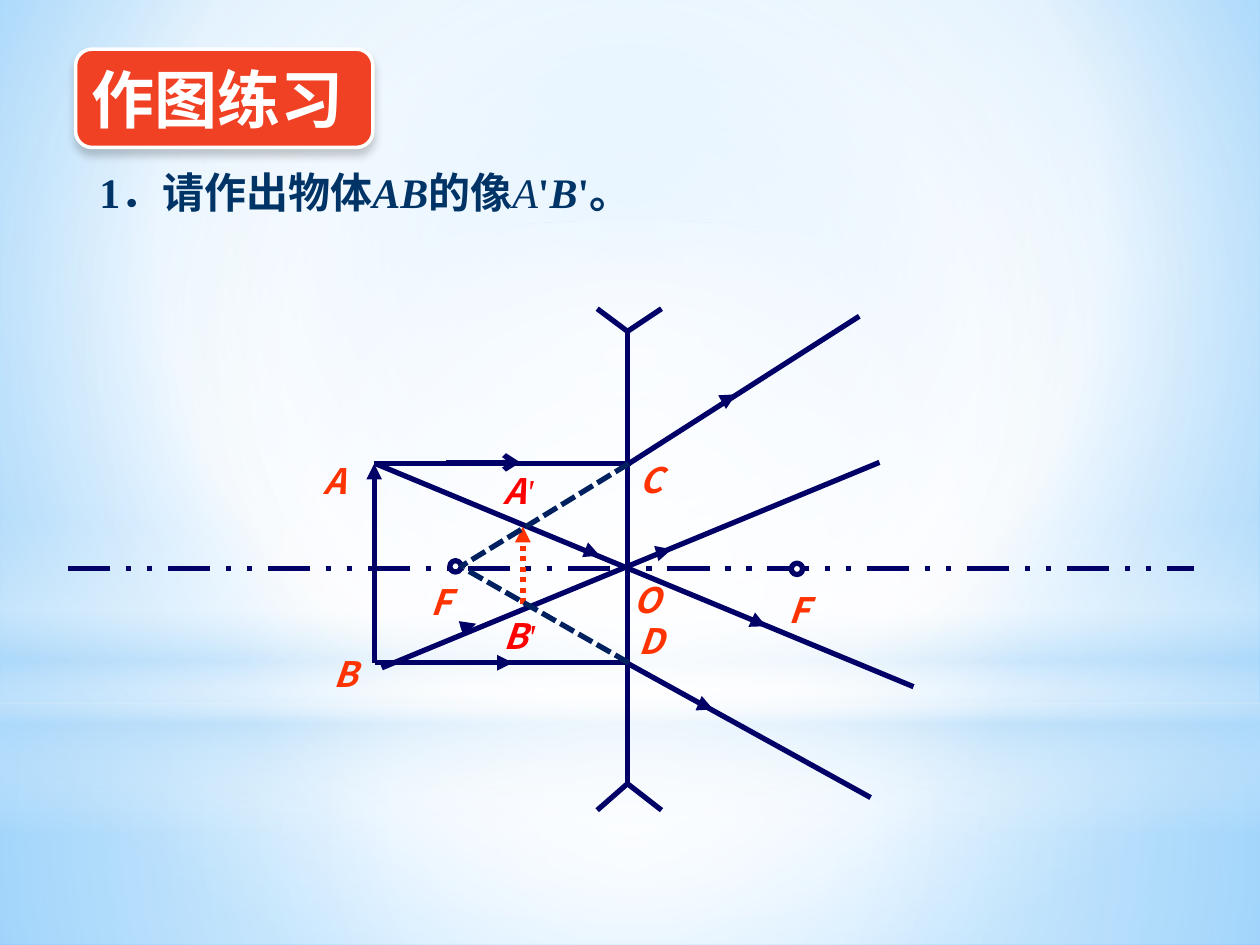
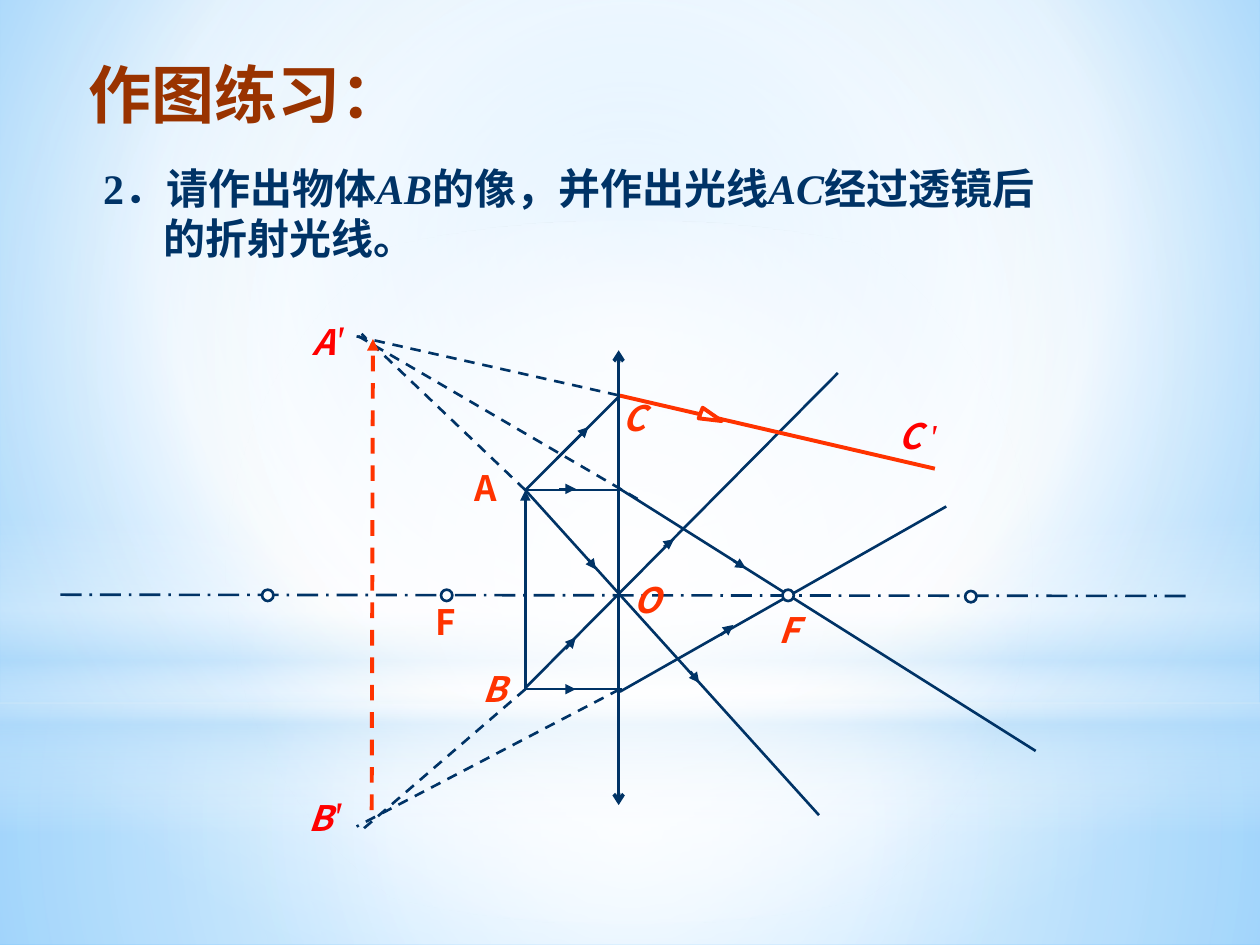
import pptx
import pptx.util
import pptx.dml.color
import pptx.enum.dml
import pptx.enum.shapes
import pptx.enum.text
import pptx.oxml
import pptx.oxml.ns
from lxml import etree

Inches, Pt = pptx.util.Inches, pptx.util.Pt
qn = pptx.oxml.ns.qn
SHAPE = pptx.enum.shapes.MSO_SHAPE
DASH = pptx.enum.dml.MSO_LINE
ANCHOR = pptx.enum.text.MSO_ANCHOR
AUTO_SIZE = pptx.enum.text.MSO_AUTO_SIZE

COLORS = {
    "white": "FFFFFF", "sky": "B4DCFA", "sky_core": "9ED5FF", "sky_edge": "5BB9FF",
    "badge": "F14124", "title": "993300", "question": "003366", "focus": "FCFDFE",
    "navy": "000066", "ink": "003366", "extension": "002060",
    "label": "FF3300", "image_label": "FF0000", "shadow": "000000",
}
SERIF, SANS = "Times New Roman", "Noto Sans CJK SC"
CENTRE = (50, 50, 50, 50)


def rgb(name):
    return pptx.dml.color.RGBColor.from_string(COLORS[name])


def set_gradient(fill, element, stops, focus=None):
    """Gradient of (position, colour, opacity) stops: circular around focus, or downwards."""
    fill.solid()
    solid = element.xpath(".//a:solidFill")[0]
    gradient = etree.Element(qn("a:gradFill"), rotWithShape="1")
    stop_list = etree.SubElement(gradient, qn("a:gsLst"))
    for position, color, opacity in stops:
        stop = etree.SubElement(stop_list, qn("a:gs"), pos=str(position * 1000))
        value = etree.SubElement(stop, qn("a:srgbClr"), val=COLORS[color])
        if opacity < 100:
            etree.SubElement(value, qn("a:alpha"), val=str(opacity * 1000))
    if focus:
        circle = etree.SubElement(gradient, qn("a:path"), path="circle")
        sides = {side: str(share * 1000) for side, share in zip("ltrb", focus)}
        etree.SubElement(circle, qn("a:fillToRect"), **sides)
    else:
        etree.SubElement(gradient, qn("a:lin"), ang="5400000", scaled="0")
    solid.getparent().replace(solid, gradient)


class LensDeck:
    """Holds the shared style and the current slide."""

    def __init__(self):
        self.prs = pptx.Presentation()
        self.prs.slide_width, self.prs.slide_height = Inches(10), Inches(7.5)
        self.slide = None
        self.ink, self.weight = "navy", 3

    def new_slide(self, ink, weight):
        self.slide = self.prs.slides.add_slide(self.prs.slide_layouts[5])
        self.ink, self.weight = ink, weight

    def sky(self):
        """Put the sky backdrop on the master."""
        master = self.prs.slide_master
        set_gradient(master.background.fill, master.element,
                     [(0, "sky_core", 100), (60, "white", 100), (100, "sky_edge", 100)],
                     (20, 10, 20, 60))
        layers = [
            (SHAPE.RECTANGLE, 5.58, 1.92, CENTRE,
             [(0, "white", 91), (37, "white", 76), (100, "sky", 79)]),
            (SHAPE.RECTANGLE, 0, 5.58, CENTRE,
             [(0, "white", 89), (48, "white", 62), (100, "sky", 79)]),
            (SHAPE.RECTANGLE, 4.12, 2.5, None,
             [(0, "white", 0), (29, "white", 30), (45, "sky", 40),
              (55, "white", 26), (65, "sky", 60), (100, "white", 0)]),
            (SHAPE.OVAL, 1.75, 5.58, CENTRE, [(0, "white", 100), (56, "white", 0)]),
        ]
        for order, (kind, top, height, focus, stops) in enumerate(layers):
            layer = self.shape(kind, 0, top, 10, height)
            layer.line.fill.background()
            set_gradient(layer.fill, layer.element, stops, focus)
            layer.element.xpath(".//p:cNvPr")[0].set("id", str(100 + order))
            master.shapes.element.insert(2 + order, layer.element)

    def shape(self, kind, left, top, width, height, fill=None, line=None, weight=None):
        shape = self.slide.shapes.add_shape(
            kind, Inches(left), Inches(top), Inches(width), Inches(height))
        shape.shadow.inherit = False
        if fill:
            shape.fill.solid()
            shape.fill.fore_color.rgb = rgb(fill)
        if line:
            shape.line.color.rgb = rgb(line)
            shape.line.width = Pt(weight or self.weight)
        return shape

    def badge(self, left, top, width, height):
        badge = self.shape(SHAPE.ROUNDED_RECTANGLE, left, top, width, height,
                           "badge", "white", 2)
        effects = badge.element.spPr.find(qn("a:effectLst"))
        shadow = etree.SubElement(effects, qn("a:outerShdw"), blurRad=str(Pt(5)),
                                  dist=str(Pt(4)), dir="5400000", rotWithShape="0")
        value = etree.SubElement(shadow, qn("a:srgbClr"), val=COLORS["shadow"])
        etree.SubElement(value, qn("a:alpha"), val="20000")
        # The title is written on top of its badge
        title = self.slide.shapes.title.element
        badge.element.addnext(title)

    def style(self, paragraph, size, color, latin):
        paragraph.alignment = pptx.enum.text.PP_ALIGN.LEFT
        font = paragraph.font
        font.size, font.bold, font.name = Pt(size), True, latin
        font.color.rgb = rgb(color)
        defaults = paragraph._p.pPr.find(qn("a:defRPr"))
        etree.SubElement(defaults, qn("a:ea"), typeface=SANS)

    def title(self, text, left, top, width, height, color):
        title = self.slide.shapes.title
        title.left, title.top = Inches(left), Inches(top)
        title.width, title.height = Inches(width), Inches(height)
        frame = title.text_frame
        frame.text = text
        frame.word_wrap, frame.auto_size = True, AUTO_SIZE.NONE
        frame.vertical_anchor = ANCHOR.MIDDLE
        self.style(frame.paragraphs[0], 36, color, SERIF)

    def text_box(self, left, top, width, height, wrap=True):
        box = self.slide.shapes.add_textbox(
            Inches(left), Inches(top), Inches(width), Inches(height))
        box.text_frame.word_wrap = wrap
        box.text_frame.auto_size = AUTO_SIZE.SHAPE_TO_FIT_TEXT
        return box.text_frame.paragraphs[0]

    def question(self, left, top, width, height, parts):
        """Parts are (text, italic, bold)."""
        paragraph = self.text_box(left, top, width, height)
        self.style(paragraph, 24, "question", SERIF)
        paragraph._p.pPr.set("marL", str(Inches(0.48)))
        paragraph._p.pPr.set("indent", str(-Inches(0.48)))
        for text, italic, bold in parts:
            run = paragraph.add_run()
            run.text = text
            run.font.italic, run.font.bold = italic, bold

    def label(self, text, left, top, width=0.39, italic=True, color="label", prime_size=None):
        paragraph = self.text_box(left, top, width, 0.44, wrap=width >= 0.5)
        self.style(paragraph, 20, color, SANS)
        paragraph.font.italic = italic
        paragraph.add_run().text = text
        if prime_size:
            prime = paragraph.add_run()
            prime.text = "'"
            prime.font.name, prime.font.size, prime.font.bold = SERIF, Pt(prime_size), False

    def line(self, start, end, color=None, weight=None, dash=None, head=None, tail=None):
        line = self.slide.shapes.add_connector(
            pptx.enum.shapes.MSO_CONNECTOR.STRAIGHT,
            *(Inches(value) for value in (*start, *end)))
        line.line.color.rgb = rgb(color or self.ink)
        line.line.width = Pt(weight or self.weight)
        if dash:
            line.line.dash_style = dash
        properties = line.element.spPr
        for tag, kind in (("a:headEnd", head), ("a:tailEnd", tail)):
            if kind:
                etree.SubElement(properties.find(qn("a:ln")), qn(tag), type=kind)
        etree.SubElement(properties, qn("a:effectLst"))

    def ray(self, start, end, *marks, tail="triangle"):
        """A light ray with direction marks (from, to) along it."""
        self.line(start, end)
        for mark_start, mark_end in marks:
            self.line(mark_start, mark_end, tail=tail)

    def focus(self, left, top):
        self.shape(SHAPE.OVAL, left, top, 0.09, 0.09, "focus", self.ink)


def diverging_lens(deck):
    deck.new_slide("navy", 3)
    deck.sky()
    deck.badge(0.6, 0.39, 2.36, 0.78)
    deck.title("作图练习", 0.63, 0.39, 2.33, 0.78, "white")
    deck.question(0.69, 1.27, 4.58, 0.9, [
        ("1．请作出物体", False, True), ("AB", True, True), ("的像", False, True),
        ("A", True, False), ("'", False, True), ("B", True, True), ("'。", False, True)])

    # Lens, axis and foci
    deck.line((4.98, 2.63), (4.98, 6.22))
    for tip, rim in ((2.63, 2.45), (6.22, 6.43)):
        for x in (4.74, 5.25):
            deck.line((4.98, tip), (x, rim))
    deck.line((0.54, 4.51), (9.48, 4.51), dash=DASH.DASH_DOT_DOT)
    deck.focus(6.28, 4.47)
    deck.focus(3.57, 4.45)

    # Object AB and its rays
    deck.line((2.97, 5.26), (2.97, 3.68), tail="triangle")
    deck.ray((2.97, 3.68), (5.01, 3.68), ((3.54, 3.67), (4.13, 3.67)), tail="arrow")
    deck.ray((4.99, 3.68), (6.82, 2.51), ((5.77, 3.17), (5.84, 3.13)))
    deck.ray((2.98, 3.68), (7.25, 5.45),
             ((4.66, 4.37), (4.76, 4.41)), ((5.97, 4.92), (6.08, 4.97)))
    deck.ray((3.03, 5.3), (6.98, 3.67),
             ((3.66, 4.99), (3.78, 4.95)), ((5.22, 4.39), (5.33, 4.36)))
    deck.ray((4.99, 5.27), (6.91, 6.33), ((5.59, 5.6), (5.66, 5.63)))
    deck.ray((2.98, 5.26), (4.98, 5.26), ((3.65, 5.26), (4.07, 5.26)))

    # Image and backward extensions
    deck.line((4.15, 4.79), (4.15, 4.18), "label", dash=DASH.ROUND_DOT, tail="triangle")
    deck.line((4.99, 3.68), (3.65, 4.5), "extension", dash=DASH.SQUARE_DOT)
    deck.line((4.99, 5.26), (3.68, 4.51), "extension", dash=DASH.SQUARE_DOT)

    # Point names
    for name, left, top, width in [
            ("A", 2.47, 3.6, 0.39), ("B", 2.55, 5.13, 0.34), ("C", 4.98, 3.59, 0.39),
            ("D", 4.97, 4.87, 0.42), ("O", 4.93, 4.54, 0.42),
            ("F", 6.16, 4.62, 0.36), ("F", 3.32, 4.56, 0.36)]:
        deck.label(name, left, top, width)
    for name, top in (("A", 3.68), ("B", 4.83)):
        deck.label(name, 3.9, top, 0.5, color="image_label", prime_size=20)


def converging_lens(deck):
    deck.new_slide("ink", 1.5)
    deck.title("作图练习：", 0.6, 0.39, 3.09, 0.7, "title")
    deck.question(0.72, 1.24, 7.68, 0.9, [
        ("2．请作出物体", False, True), ("AB", True, True),
        ("的像，并作出光线", False, True), ("AC", True, True),
        ("经过透镜后的折射光线。", False, True)])

    # Axis, object AB and its rays
    deck.line((0.48, 4.72), (9.42, 4.73), dash=DASH.LONG_DASH_DOT)
    deck.line((4.17, 5.47), (4.17, 3.89), tail="triangle")
    deck.ray((4.92, 5.49), (7.51, 4.02), ((5.72, 5.04), (5.82, 4.96)))
    deck.ray((4.17, 3.89), (6.5, 6.47),
             ((4.67, 4.44), (4.73, 4.52)), ((5.48, 5.33), (5.55, 5.42)))
    deck.ray((4.16, 3.89), (4.93, 3.89), ((4.44, 3.88), (4.57, 3.88)))
    deck.ray((4.92, 3.88), (8.22, 5.96), ((5.82, 4.45), (5.92, 4.51)))
    deck.ray((4.17, 5.47), (4.94, 5.47), ((4.45, 5.47), (4.57, 5.47)))
    deck.ray((4.17, 5.46), (6.65, 2.96),
             ((5.27, 4.34), (5.35, 4.28)), ((4.49, 5.15), (4.57, 5.06)))
    deck.ray((4.17, 3.89), (4.92, 3.14), ((4.42, 3.64), (4.67, 3.39)))

    # Backward extensions and image
    for start, end in [
            ((5.06, 3.96), (2.83, 2.66)), ((4.17, 3.89), (2.87, 2.65)),
            ((4.92, 5.47), (2.83, 6.56)), ((4.17, 5.47), (2.87, 6.59)),
            ((2.83, 2.67), (4.92, 3.14))]:
        deck.line(start, end, dash=DASH.DASH)
    deck.line((2.95, 6.43), (2.96, 2.69), "label", 2.25, DASH.DASH, tail="triangle")

    # Refracted ray CC'
    deck.line((4.92, 3.14), (7.42, 3.72), "label", 2.25)
    direction = deck.shape(SHAPE.ISOSCELES_TRIANGLE, 5.6, 3.22, 0.09, 0.18,
                           "white", "label", 2.25)
    direction.rotation = 110.8

    # Lens and foci
    deck.line((4.91, 2.78), (4.91, 6.39), weight=2, head="arrow", tail="arrow")
    for left, top in ((2.08, 4.68), (3.5, 4.68), (6.21, 4.68), (7.66, 4.69)):
        deck.focus(left, top)

    # Point names
    for name, left, top, width, italic in [
            ("A", 3.67, 3.65, 0.39, False), ("B", 3.73, 5.25, 0.37, True),
            ("C", 4.84, 3.1, 0.7, True), ("O", 4.93, 4.54, 0.42, True),
            ("F", 3.36, 4.72, 0.36, False), ("F", 6.08, 4.78, 0.36, True)]:
        deck.label(name, left, top, width, italic)
    for name, left, top, width, prime_size in [
            ("A", 2.38, 2.44, 0.7, 24), ("B", 2.35, 6.22, 0.83, 24),
            ("C ", 7.03, 3.24, 0.7, 20)]:
        deck.label(name, left, top, width, color="image_label", prime_size=prime_size)


def main():
    deck = LensDeck()
    diverging_lens(deck)
    converging_lens(deck)
    deck.prs.save("out.pptx")


if __name__ == "__main__":
    main()
